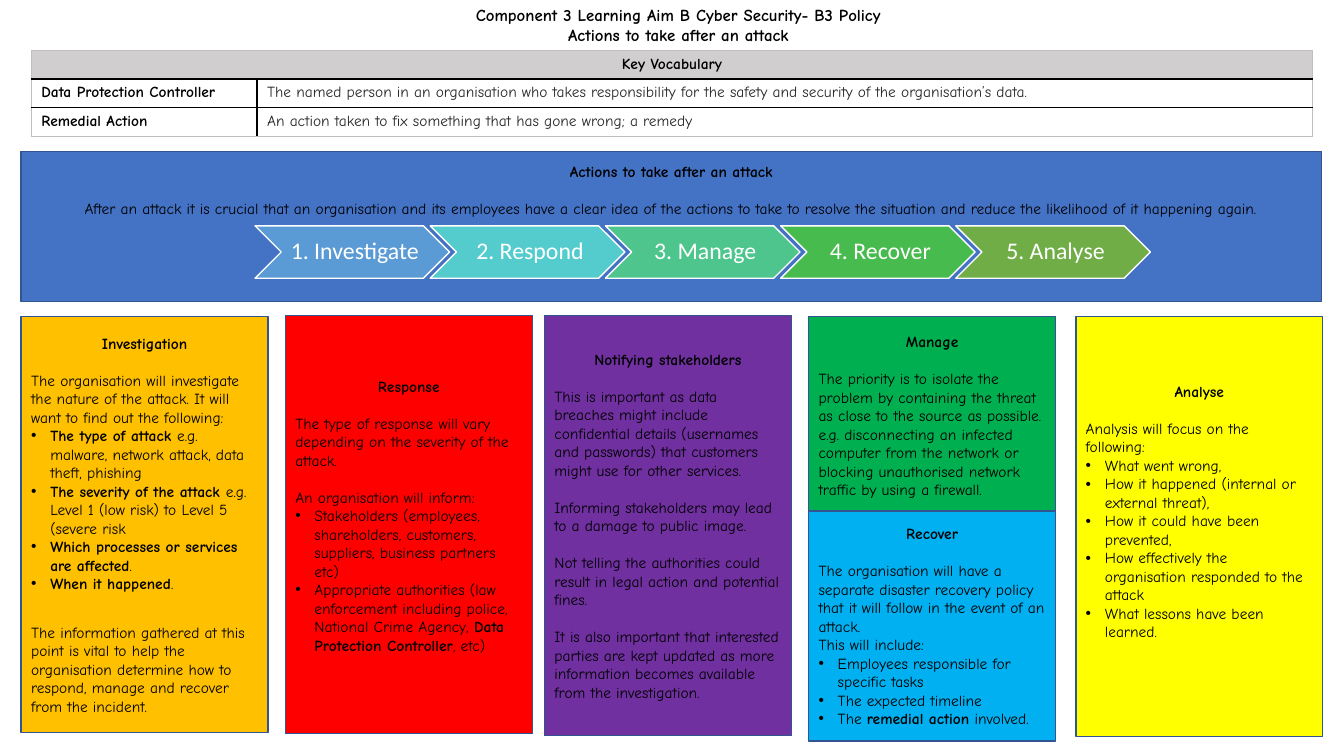
from dataclasses import dataclass
from lxml.etree import SubElement
from pptx import Presentation
from pptx.dml.color import RGBColor
from pptx.enum.shapes import MSO_SHAPE as Shape
from pptx.enum.text import MSO_ANCHOR as Anchor, PP_ALIGN as Align
from pptx.oxml.ns import qn
from pptx.util import Inches, Pt


@dataclass(frozen=True)
class Theme:
    font: str = "Comic Neue"
    step_font: str = "Calibri"
    title: int = 12
    body: int = 11
    step: int = 17
    gap: float = 13.2  # height of one body line, in points
    black: str = "000000"
    white: str = "FFFFFF"
    grey_text: str = "262626"
    header: str = "D0CECE"
    frame: str = "BFBFBF"
    outline: str = "325491"
    banner: str = "4472C4"
    amber: str = "FFC000"
    red: str = "FF0000"
    purple: str = "7030A0"
    green: str = "00B050"
    blue: str = "00B0F0"
    yellow: str = "FFFF00"
    steps: tuple = ("5B9BD5", "54CCCD", "4DC58D", "48BB4F", "70AD47")


T = Theme()


# Paragraph kinds: (text with **bold** parts, format)
def heading(text):
    return text, dict(bold=True, align=Align.CENTER)


def body(text, gap=0, **fmt):
    return text, dict(gap=gap, **fmt)


def bullet(text):
    return text, dict(bulleted=True)


def write(p, text, font=T.font, size=T.body, color=T.black, bold=False,
          align=Align.LEFT, gap=0, bulleted=False):
    p.alignment = align
    if gap:
        p.space_before = Pt(gap)
    for i, part in enumerate(text.split("**")):
        if part:
            r = p.add_run()
            r.text = part
            r.font.name, r.font.size = font, Pt(size)
            r.font.bold = bold or i % 2 == 1
            r.font.color.rgb = RGBColor.from_string(color)
    if bulleted:
        pPr = p._p.get_or_add_pPr()
        pPr.set("marL", str(Inches(0.19)))
        pPr.set("indent", str(-Inches(0.19)))
        SubElement(pPr, qn("a:buFont"), typeface="Arial")
        SubElement(pPr, qn("a:buChar"), char="•")


def fill_frame(tf, paragraphs):
    tf.word_wrap = True
    tf.vertical_anchor = Anchor.MIDDLE
    for i, (text, fmt) in enumerate(paragraphs):
        write(tf.add_paragraph() if i else tf.paragraphs[0], text, **fmt)


def add_block(s, kind, box, fill, line, paragraphs, bottom=0.05):
    sp = s.shapes.add_shape(kind, *map(Inches, box))
    sp.shadow.inherit = False
    sp.fill.solid()
    sp.fill.fore_color.rgb = RGBColor.from_string(fill)
    sp.line.color.rgb = RGBColor.from_string(line)
    sp.line.width = Pt(1)
    sp.text_frame.margin_bottom = Inches(bottom)
    fill_frame(sp.text_frame, paragraphs)
    return sp


def add_title(s, lines):
    sp = s.shapes.add_textbox(Inches(0.13), 0, Inches(13.2), Inches(0.5))
    fill_frame(sp.text_frame, [
        (t, dict(size=T.title, bold=True, align=Align.CENTER)) for t in lines])


def set_border(cell, side, color):
    ln = SubElement(cell._tc.get_or_add_tcPr(), qn("a:" + side), w=str(Pt(1)))
    SubElement(SubElement(ln, qn("a:solidFill")), qn("a:srgbClr"), val=color)


def add_vocabulary(s, title, terms):
    rows = len(terms) + 1
    tbl = s.shapes.add_table(rows, 2, Inches(0.31), Inches(0.5),
                             Inches(12.71), Inches(0.28 * rows)).table
    for col, width in zip(tbl.columns, (2.24, 10.47)):
        col.width = Inches(width)
    tbl.cell(0, 0).merge(tbl.cell(0, 1))
    for i, row in enumerate([(title, "")] + terms):
        for j, text in enumerate(row):
            cell = tbl.cell(i, j)
            edges = dict(lnL=j == 0, lnR=j == 1 or i == 0,
                         lnT=i == 0, lnB=i == rows - 1)
            for side, outer in edges.items():
                set_border(cell, side, T.frame if outer else T.black)
            cell.fill.solid()
            cell.fill.fore_color.rgb = RGBColor.from_string(T.white if i else T.header)
            write(cell.text_frame.paragraphs[0], text, bold=j == 0,
                  color=T.grey_text if j else T.black,
                  align=Align.LEFT if i else Align.CENTER)


def add_steps(s, names):
    for i, (name, fill) in enumerate(zip(names, T.steps)):
        label = f"{i + 1}. {name}", dict(font=T.step_font, size=T.step,
                                         color=T.white, align=Align.CENTER)
        sp = add_block(s, Shape.CHEVRON, (2.53 + 1.7375 * i, 2.24, 1.93, 0.52),
                       fill, T.white, [label], bottom=0.02)
        tf = sp.text_frame
        tf.margin_left = Inches(0.07)
        tf.margin_top = tf.margin_right = Inches(0.02)
        tf.paragraphs[0].line_spacing = 0.9


# Cards: left, top, height, fill, bottom inset, paragraphs
CARDS = [
    (0.21, 3.14, 4.13, T.amber, 0.05, [
        heading("Investigation"),
        body("The organisation will investigate the nature of the attack. It will want to find out the following:", T.gap),
        bullet("**The type of attack **e.g. malware, network attack, data theft, phishing"),
        bullet("**The severity of the attack **e.g. Level 1 (low risk) to Level 5 (severe risk"),
        bullet("**Which processes or services are affected**."),
        bullet("**When it happened**."),
        body("The information gathered at this point is vital to help the organisation determine how to respond, manage and recover from the incident.", 21.5)]),
    (2.83, 3.13, 4.15, T.red, 0.23, [
        heading("Response"),
        body("The type of response will vary depending on the severity of the attack.", T.gap),
        body("An organisation will inform:", T.gap),
        bullet("Stakeholders (employees, shareholders, customers, suppliers, business partners etc)"),
        bullet("Appropriate authorities (law enforcement including police, National Crime Agency, **Data Protection Controller**, etc)")]),
    (5.4, 3.13, 4.17, T.purple, 0.05, [
        heading("Notifying stakeholders"),
        body("This is important as data breaches might include confidential details (usernames and passwords) that customers might use for other services.", T.gap),
        body("Informing stakeholders may lead to a damage to public image.", T.gap),
        body("Not telling the authorities could result in legal action and potential fines.", T.gap),
        body("It is also important that interested parties are kept updated as more information becomes available from the investigation.", T.gap)]),
    (8.02, 3.14, 1.97, T.green, 0.05, [
        heading("Manage"),
        body("The priority is to isolate the problem by containing the threat as close to the source as possible.", T.gap),
        body("e.g. disconnecting an infected computer from the network or blocking unauthorised network traffic by using a firewall.")]),
    (8.02, 5.07, 2.28, T.blue, 0.05, [
        heading("Recover"),
        body("The organisation will have a separate disaster recovery policy that it will follow in the event of an attack.", T.gap),
        body("This will include:"),
        bullet("Employees responsible for specific tasks"),
        bullet("The expected timeline"),
        bullet("The **remedial action** involved.")]),
    (10.67, 3.14, 4.17, T.yellow, 0.35, [
        heading("Analyse"),
        body("Analysis will focus on the following:", T.gap),
        bullet("What went wrong,"),
        bullet("How it happened (internal or external threat),"),
        bullet("How it could have been prevented,"),
        bullet("How effectively the organisation responded to the attack"),
        bullet("What lessons have been learned.")]),
]


def main():
    prs = Presentation()
    prs.slide_width, prs.slide_height = Inches(13.33), Inches(7.5)
    s = prs.slides.add_slide(prs.slide_layouts[6])

    # Title and vocabulary
    add_title(s, ["Component 3 Learning Aim B Cyber Security- B3 Policy",
                  "Actions to take after an attack"])
    add_vocabulary(s, "Key Vocabulary", [
        ("Data Protection Controller", "The named person in an organisation who takes responsibility for the safety and security of the organisation’s data."),
        ("Remedial Action", "An action taken to fix something that has gone wrong; a remedy")])

    # Banner with the five steps
    add_block(s, Shape.RECTANGLE, (0.21, 1.5, 12.9, 1.49), T.banner, T.outline, [
        heading("Actions to take after an attack"),
        body("After an attack it is crucial that an organisation and its employees have a clear idea of the actions to take to resolve the situation and reduce the likelihood of it happening again.",
             T.gap, align=Align.CENTER)], bottom=0.78)
    add_steps(s, ["Investigate", "Respond", "Manage", "Recover", "Analyse"])

    # Detail cards
    for left, top, height, fill, bottom, paragraphs in CARDS:
        add_block(s, Shape.RECTANGLE, (left, top, 2.45, height), fill,
                  T.outline, paragraphs, bottom)
    prs.save("out.pptx")


if __name__ == "__main__":
    main()
